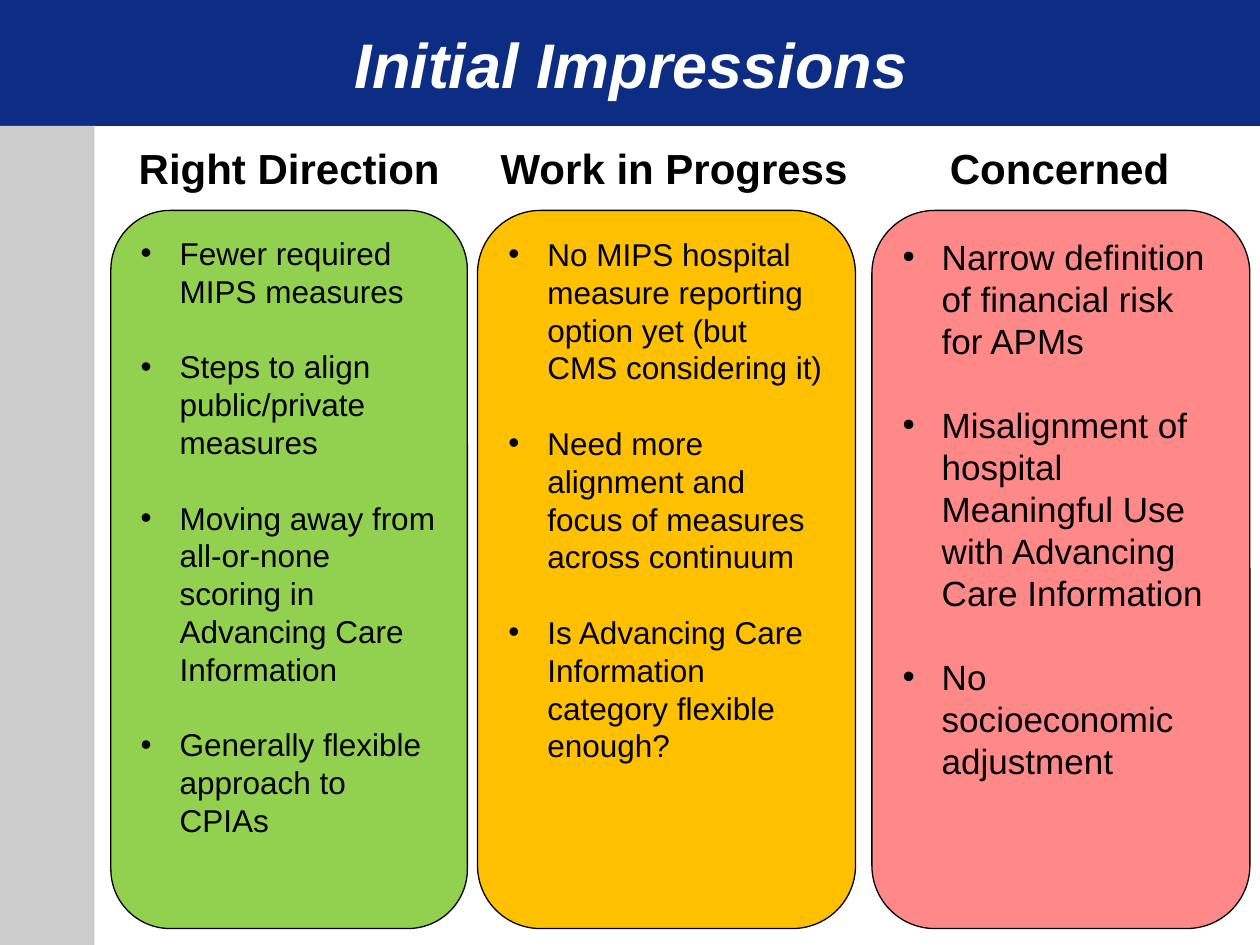
from dataclasses import dataclass

from lxml import etree
from pptx import Presentation
from pptx import util as u
from pptx.dml.color import RGBColor
from pptx.enum import shapes, text
from pptx.oxml.ns import qn


@dataclass(frozen=True)
class Theme:
    font: str = "Arial"
    banner: str = "0C2D83"
    sidebar: str = "CCCCCC"
    ink: str = "000000"
    title_ink: str = "FFFFFF"
    title_size: int = 36
    heading_size: int = 24
    outline: float = 0.75
    leading: float = 1.2
    indent: float = 0.31


THEME = Theme()
WIDTH, HEIGHT = 10, 7.5
BANNER_H, SIDEBAR_W = 1, 0.75
HEADING_TOP, HEADING_H = 1.08, 0.5
CARD_TOP, CARD_H = 1.67, 5.7

# Card span, heading span (left, width), fill, text size, heading, bullets
COLUMNS = [
    ((0.88, 2.83), (0.92, 2.75), "92D050", 18, "Right Direction", [
        "Fewer required MIPS measures",
        "Steps to align public/private measures",
        "Moving away from all-or-none scoring in Advancing Care Information",
        "Generally flexible approach to CPIAs",
    ]),
    ((3.79, 3), (3.79, 3.12), "FFC000", 18, "Work in Progress", [
        "No MIPS hospital measure reporting option yet (but CMS considering it)",
        "Need more alignment and focus of measures across continuum",
        "Is Advancing Care Information category flexible enough?",
    ]),
    ((6.92, 3), (6.93, 2.96), "FF8989", 20, "Concerned", [
        "Narrow definition of financial risk for APMs",
        "Misalignment of hospital Meaningful Use with Advancing Care Information",
        "No socioeconomic adjustment",
    ]),
]


def inches(box):
    return [u.Inches(length) for length in box]


def add_run(paragraph, words, size, color, bold=False, italic=False):
    run = paragraph.add_run()
    run.text = words
    font = run.font
    font.name, font.size = THEME.font, u.Pt(size)
    font.bold, font.italic = bold, italic
    font.color.rgb = RGBColor.from_string(color)


def add_panel(slide, box, fill, kind=shapes.MSO_SHAPE.RECTANGLE, outlined=False):
    panel = slide.shapes.add_shape(kind, *inches(box))
    panel.shadow.inherit = False
    panel.fill.solid()
    panel.fill.fore_color.rgb = RGBColor.from_string(fill)
    if outlined:
        panel.line.color.rgb = RGBColor.from_string(THEME.ink)
        panel.line.width = u.Pt(THEME.outline)
    else:
        panel.line.fill.background()
    return panel


def add_label(slide, box, words, size, color, anchor, italic=False):
    frame = slide.shapes.add_textbox(*inches(box)).text_frame
    frame.word_wrap = True
    frame.vertical_anchor = anchor
    paragraph = frame.paragraphs[0]
    paragraph.alignment = text.PP_ALIGN.CENTER
    add_run(paragraph, words, size, color, bold=True, italic=italic)


def add_bullet(paragraph, words, size):
    props = paragraph._p.get_or_add_pPr()
    props.set("marL", str(u.Inches(THEME.indent)))
    props.set("indent", str(-u.Inches(THEME.indent)))
    etree.SubElement(props, qn("a:buFont"), typeface=THEME.font)
    etree.SubElement(props, qn("a:buChar"), char="•")
    paragraph.alignment = text.PP_ALIGN.LEFT
    paragraph.line_spacing = u.Pt(size * THEME.leading)
    add_run(paragraph, words, size, THEME.ink)


def draw_frame(slide, box):
    """Banner with the title, and the sidebar below it."""
    left, top, width, height = box
    add_panel(slide, (left, top, width, BANNER_H), THEME.banner)
    add_panel(slide, (left, top + BANNER_H, SIDEBAR_W, height - BANNER_H),
              THEME.sidebar)
    add_label(slide, (left + 0.92, top, 8.18, BANNER_H), "Initial Impressions",
              THEME.title_size, THEME.title_ink, text.MSO_ANCHOR.MIDDLE, italic=True)


def draw_card(slide, box, fill, size, bullets):
    """Rounded card with bullets one blank line apart."""
    card = add_panel(slide, box, fill, shapes.MSO_SHAPE.ROUNDED_RECTANGLE, True)
    frame = card.text_frame
    frame.word_wrap = True
    frame.vertical_anchor = text.MSO_ANCHOR.TOP
    for index, words in enumerate(bullets):
        paragraph = frame.add_paragraph() if index else frame.paragraphs[0]
        add_bullet(paragraph, words, size)
        if index:
            paragraph.space_before = u.Pt(size * THEME.leading)


def main():
    deck = Presentation()
    deck.slide_width, deck.slide_height = inches((WIDTH, HEIGHT))
    slide = deck.slides.add_slide(deck.slide_layouts[6])

    draw_frame(slide, (0, 0, WIDTH, HEIGHT))

    # Three columns of impressions
    for (left, width), (head_left, head_width), fill, size, heading, bullets in COLUMNS:
        draw_card(slide, (left, CARD_TOP, width, CARD_H), fill, size, bullets)
        add_label(slide, (head_left, HEADING_TOP, head_width, HEADING_H), heading,
                  THEME.heading_size, THEME.ink, text.MSO_ANCHOR.TOP)

    deck.save("out.pptx")


if __name__ == "__main__":
    main()
